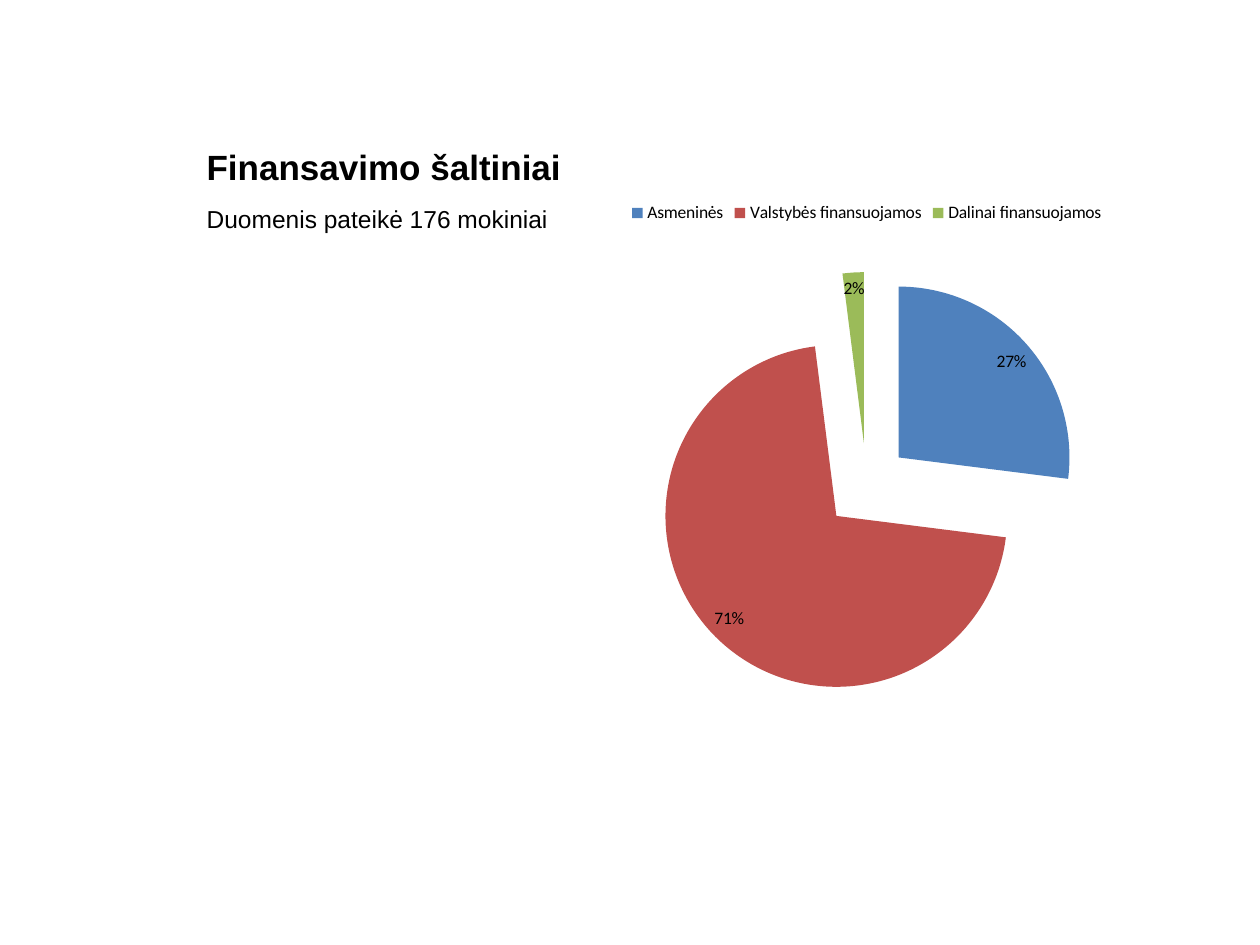
from lxml import etree
from pptx import Presentation
from pptx.chart.data import CategoryChartData
from pptx.dml.color import RGBColor
from pptx.enum.chart import XL_CHART_TYPE, XL_LABEL_POSITION, XL_LEGEND_POSITION
from pptx.enum.text import MSO_ANCHOR, PP_ALIGN
from pptx.oxml.ns import qn
from pptx.util import Cm, Pt

PIE = XL_CHART_TYPE.PIE
BEST_FIT = XL_LABEL_POSITION.BEST_FIT
LEGEND_TOP = XL_LEGEND_POSITION.TOP
TOP, BOTTOM = MSO_ANCHOR.TOP, MSO_ANCHOR.BOTTOM
LEFT = PP_ALIGN.LEFT

THEME = {
    "text_font": "Arial",
    "chart_font": "Calibri",
    "ink": RGBColor.from_string("000000"),
    "slices": ["4F81BD", "C0504D", "9BBB59"],
    "title_size": Pt(20),
    "body_size": Pt(14),
    "chart_size": Pt(10),
}


def style_font(font, name, size):
    font.name = name
    font.size = size
    font.color.rgb = THEME["ink"]


def fill_placeholder(box, text, top, height, anchor, size, bold):
    box.left, box.top, box.width, box.height = Cm(3.91), top, Cm(9.19), height
    frame = box.text_frame
    frame.word_wrap = True
    frame.vertical_anchor = anchor
    para = frame.paragraphs[0]
    para.alignment = LEFT
    para.space_before = Pt(0)
    span = para.add_run()
    span.text = text
    style_font(span.font, THEME["text_font"], size)
    span.font.bold = bold


deck = Presentation()
deck.slide_width, deck.slide_height = Cm(25.4), Cm(19.05)
page = deck.slides.add_slide(deck.slide_layouts.get_by_name("Content with Caption"))
title, content, body = page.placeholders
content.element.getparent().remove(content.element)

fill_placeholder(title, "Finansavimo šaltiniai", Cm(0.76), Cm(3.15),
                 BOTTOM, THEME["title_size"], True)

funding = CategoryChartData()
funding.categories = ["Asmeninės", "Valstybės finansuojamos", "Dalinai finansuojamos"]
funding.add_series("Series 1", [27, 71, 2])
chart = page.shapes.add_chart(
    PIE, Cm(10.97), Cm(3.81), Cm(13), Cm(10.64), funding).chart
style_font(chart.font, THEME["chart_font"], THEME["chart_size"])
chart.has_title = False
chart.has_legend = True
chart.legend.position = LEGEND_TOP
chart.legend.include_in_layout = False

plot = chart.plots[0]
plot.vary_by_categories = True
plot.has_data_labels = True
labels = plot.data_labels
labels.show_percentage = True
labels.show_value = False
labels.number_format = "0%"
labels.number_format_is_linked = False
labels.position = BEST_FIT
style_font(labels.font, THEME["chart_font"], THEME["chart_size"])

series = plot.series[0]
for index, color in enumerate(THEME["slices"]):
    fill = series.points[index].format.fill
    fill.solid()
    fill.fore_color.rgb = RGBColor.from_string(color)
explosion = etree.Element(qn("c:explosion"), val="25")
series._element.find(qn("c:dPt")).addprevious(explosion)

fill_placeholder(body, "Duomenis pateikė 176 mokiniai", Cm(3.99), Cm(12.75),
                 TOP, THEME["body_size"], False)

deck.save("out.pptx")
